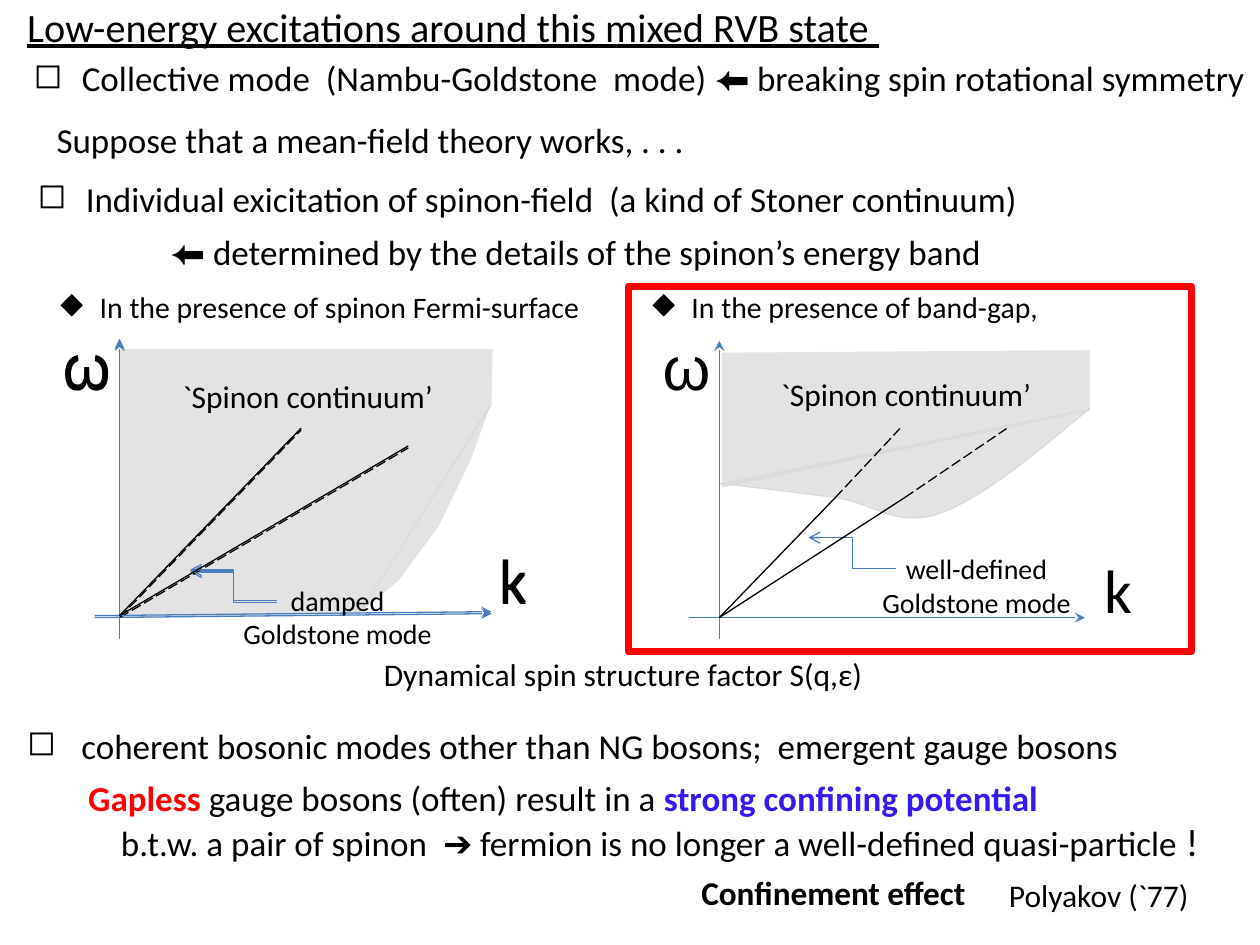
"""Build the slide on low-energy excitations around a mixed RVB state."""
from dataclasses import dataclass

from lxml import etree
from pptx import Presentation
from pptx import util as u
from pptx.dml.color import RGBColor
from pptx.enum import dml, shapes, text
from pptx.oxml.ns import qn


@dataclass(frozen=True)
class Theme:
    black: str = "000000"
    red: str = "FF0000"
    violet: str = "341BF1"
    axis: str = "4B7EBC"
    continuum: str = "D9D9D9"
    continuum_alpha: int = 73000
    font: str = "Calibri"
    greek_font: str = "Arial"
    title: int = 23
    exclamation: int = 22
    body: int = 20
    emphasis: int = 19
    label: int = 18
    case: int = 17
    note: int = 16
    symbol: int = 35
    thin: float = 0.75
    frame: float = 4


THEME = Theme()


class SlideBuilder:
    def __init__(self, theme, slide):
        self.theme = theme
        self.slide = slide

    def write_run(self, paragraph, content, color=None, **formats):
        run = paragraph.add_run()
        run.text = content
        for name, value in ({"name": self.theme.font} | formats).items():
            setattr(run.font, name, u.Pt(value) if name == "size" else value)
        run.font.color.rgb = RGBColor.from_string(color or self.theme.black)

    def text(self, box, *paragraphs, wrap=False, **formats):
        shape = self.slide.shapes.add_textbox(*map(u.Cm, box))
        frame = shape.text_frame
        frame.word_wrap = wrap
        frame.auto_size = text.MSO_AUTO_SIZE.SHAPE_TO_FIT_TEXT
        for index, item in enumerate(paragraphs):
            paragraph = frame.paragraphs[0] if index == 0 else frame.add_paragraph()
            layout = item if isinstance(item, dict) else {"runs": [(item, {})]}
            self.lay_out(paragraph, **{k: v for k, v in layout.items() if k != "runs"})
            for content, extra in layout["runs"]:
                self.write_run(paragraph, content, **(formats | extra))

    def lay_out(self, paragraph, margin=0, indent=0, bullet=None, **settings):
        for name, value in settings.items():
            setattr(paragraph, name, value)
        properties = paragraph._p.get_or_add_pPr()
        properties.set("marL", str(u.Cm(margin)))
        properties.set("indent", str(u.Cm(indent)))
        if bullet:
            etree.SubElement(properties, qn("a:buChar")).set("char", bullet)

    def line(self, start, end, color, dashed=False, head=None, elbow=False):
        kind = shapes.MSO_CONNECTOR.ELBOW if elbow else shapes.MSO_CONNECTOR.STRAIGHT
        connector = self.slide.shapes.add_connector(kind, *map(u.Cm, (*start, *end)))
        connector.line.color.rgb = RGBColor.from_string(color)
        connector.line.width = u.Pt(self.theme.thin)
        if dashed:
            connector.line.dash_style = dml.MSO_LINE.LONG_DASH
        if head:
            etree.SubElement(connector.line._get_or_add_ln(), qn("a:tailEnd")).set("type", head)
        etree.SubElement(connector._element.spPr, qn("a:effectLst"))

    def region(self, points, outlined=False):
        corners = [tuple(map(u.Cm, point)) for point in points]
        builder = self.slide.shapes.build_freeform(*corners[0])
        builder.add_line_segments(corners[1:], close=not outlined)
        shape = builder.convert_to_shape()
        shape.shadow.inherit = False
        color = RGBColor.from_string(self.theme.continuum)
        shape.fill.solid()
        shape.fill.fore_color.rgb = color
        fill = shape._element.spPr.find(qn("a:solidFill"))
        etree.SubElement(fill[0], qn("a:alpha")).set("val", str(self.theme.continuum_alpha))
        if outlined:
            shape.line.color.rgb = color
            shape.line.width = u.Pt(self.theme.thin)
        else:
            shape.line.fill.background()

    def frame(self, box):
        shape = self.slide.shapes.add_shape(shapes.MSO_SHAPE.RECTANGLE, *map(u.Cm, box))
        shape.shadow.inherit = False
        shape.fill.background()
        shape.line.color.rgb = RGBColor.from_string(self.theme.red)
        shape.line.width = u.Pt(self.theme.frame)

    def axes(self, x, y, span, rise, k_offset, pointer):
        theme = self.theme
        self.line((x, y + 0.43), (x, y - 5.58), theme.axis, head="stealth")
        self.line((x + span[0], y), (x + span[1], y - rise), theme.axis, head="stealth")
        self.text((x + k_offset[0], y + k_offset[1], 1.07, 1.75), "k", size=theme.symbol)
        self.text((x - 1.39, y - 5.93, 1.4, 1.75), "ω", size=theme.symbol, name=theme.greek_font)
        tail = (x + pointer[0], y + pointer[1])
        self.line(tail, (tail[0] - 1.76, tail[1] - 0.62), theme.axis, head="arrow", elbow=True)

    def panel_labels(self, continuum, mode, state):
        self.text((*continuum, 5.61, 1.02), "`Spinon continuum’", size=self.theme.label)
        rows = [{"runs": [(row, {})], "alignment": text.PP_ALIGN.CENTER}
                for row in (state, "Goldstone mode")]
        self.text((*mode, 4.37, 1.63), *rows, size=self.theme.note)


def bullet(content, mark="◻", margin=0.97):
    return {"runs": [(content, {})], "margin": margin, "indent": -margin, "bullet": mark}


def curve(start, *segments, steps=10):
    points = [start]
    for first, second, end in segments:
        begin = points[-1]
        for t in (step / steps for step in range(1, steps + 1)):
            weights = ((1 - t) ** 3, 3 * t * (1 - t) ** 2, 3 * t * t * (1 - t), t ** 3)
            points.append(tuple(sum(w * p[axis] for w, p in zip(weights, (begin, first, second, end)))
                                for axis in (0, 1)))
    return points


def draw_headings(page):
    page.text((0.3, -0.08, 17.88, 1.24), "Low-energy excitations around this mixed RVB state ",
              size=THEME.title, underline=True)
    page.text((0.43, 1.02, 25.2, 1.12), bullet(
        "Collective mode  (Nambu-Goldstone  mode) ⬅ breaking spin rotational symmetry"), size=THEME.body)
    page.text((0.89, 2.26, 13.44, 1.12), "Suppose that a mean-field theory works, . . .", size=THEME.body)
    page.text((0.51, 3.45, 22.4, 2.31),
              bullet("Individual exicitation of spinon-field  (a kind of Stoner continuum)"),
              {"runs": [("⬅ determined by the details of the spinon’s energy band", {})],
               "margin": 2.67, "space_before": u.Pt(6.5)}, wrap=True, size=THEME.body)
    for left, width, case in ((0.97, 12.14, "In the presence of spinon Fermi-surface"),
                              (12.9, 8.41, "In the presence of band-gap,")):
        page.text((left, 5.69, width, 0.99), bullet(case, "◆", 0.79), wrap=True, size=THEME.case)


def draw_gapless_panel(page):
    page.region([(2.41, 7.04), (2.41, 12.45), (7.26, 12.37), (9.91, 8.18), (9.93, 7.04)])
    page.region([(9.91, 8.1), (7.26, 12.34), (8.03, 11.71), (8.84, 10.62), (9.5, 9.25)])
    x = 2.41
    for y, dashed in ((12.45, True), (12.41, False)):
        page.axes(x, y, (-0.5, 7.5), 0.08, (7.42, -1.62), (3.18, -0.3))
        for dx, dy in ((5.82, -3.42), (3.66, -3.78)):
            page.line((x, y), (x + dx, y + dy), THEME.black, dashed)
    page.panel_labels((3.43, 7.47), (4.62, 11.63), "damped")


def draw_gapped_panel(page):
    page.frame((12.67, 5.77, 11.35, 7.37))
    page.region([(14.55, 9.83), (21.97, 8.28), (21.97, 7.06), (14.55, 7.11)])
    page.region(curve((14.5, 9.75), ((15.29, 9.83), (16.08, 9.93), (16.84, 10.03)),
                      ((17.58, 10.13), (18.06, 10.64), (18.92, 10.36)),
                      ((19.79, 10.06), (20.88, 9.14), (21.97, 8.23))), outlined=True)
    origin = (14.5, 12.45)
    page.axes(*origin, (-0.61, 7.37), 0, (7.52, -1.45), (3.56, -0.99))
    for entry, end in (((18.24, 10.03), (20.29, 8.64)), ((16.84, 10.03), (18.14, 8.64))):
        page.line(origin, entry, THEME.black)
        page.line(entry, end, THEME.black, dashed=True)
    page.panel_labels((15.49, 7.44), (17.5, 11), "well-defined")


def draw_conclusions(page):
    page.text((7.49, 13.08, 10.26, 1.02), "Dynamical spin structure factor S(q,ε)", size=THEME.label)
    page.text((0.3, 14.48, 22.81, 1.24), bullet(
        "coherent bosonic modes other than NG bosons;  emergent gauge bosons", margin=1.09),
        wrap=True, size=THEME.body)
    page.text((1.4, 15.52, 23.32, 2.06),
              {"runs": [("Gapless ", {"color": THEME.red, "bold": True}),
                        ("gauge bosons (often) result in a ", {}),
                        ("strong confining potential", {"color": THEME.violet, "bold": True})],
               "indent": 0.13},
              {"runs": [("b.t.w. a pair of spinon  ➔ fermion is no longer a well-defined quasi-particle ", {}),
                        ("!", {"size": THEME.exclamation})], "indent": 0.79},
              wrap=True, size=THEME.body)
    page.text((13.89, 17.45, 5.94, 1.07), "Confinement effect", size=THEME.emphasis, bold=True)
    page.text((20.09, 17.53, 4.32, 1.02), "Polyakov (`77)", size=THEME.label)


def main():
    presentation = Presentation()
    presentation.slide_width, presentation.slide_height = u.Cm(25.4), u.Cm(19.05)
    page = SlideBuilder(THEME, presentation.slides.add_slide(presentation.slide_layouts[6]))
    for draw in (draw_headings, draw_gapless_panel, draw_gapped_panel, draw_conclusions):
        draw(page)
    presentation.save("out.pptx")


if __name__ == "__main__":
    main()
